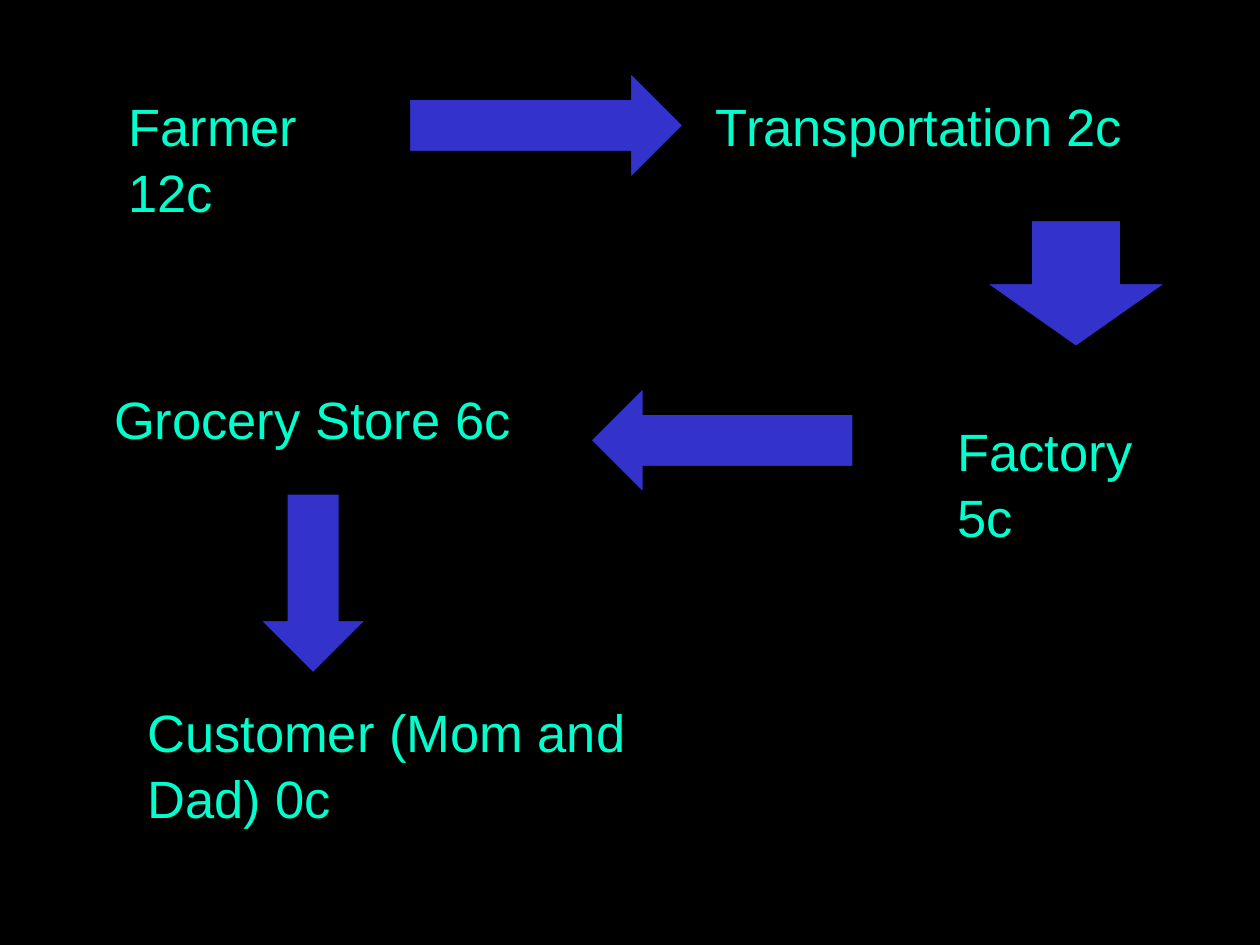
from pptx import Presentation
from pptx.dml.color import RGBColor
from pptx.enum.shapes import MSO_SHAPE
from pptx.enum.text import PP_ALIGN
from pptx.util import Inches, Pt

COLORS = {"background": "000000", "text": "00FFCC", "arrow": "3333CC", "outline": "000000"}
FONT = "Arial"

# text, alignment, (left, top, width, height)
STAGES = [
    ("Farmer 12c", PP_ALIGN.LEFT, (0.92, 0.67, 2.12, 0.5)),
    ("Transportation 2c", PP_ALIGN.CENTER, (5.42, 0.67, 3.75, 0.9)),
    ("Factory 5c", PP_ALIGN.LEFT, (7.5, 3.25, 1.98, 0.5)),
    ("Grocery Store 6c", PP_ALIGN.CENTER, (0.27, 3, 4.42, 0.5)),
    ("Customer (Mom and Dad) 0c", PP_ALIGN.LEFT, (1.07, 5.48, 4.53, 0.8)),
]
# preset, (left, top, width, height)
ARROWS = [
    (MSO_SHAPE.RIGHT_ARROW, (3.25, 0.58, 2.17, 0.83)),
    (MSO_SHAPE.DOWN_ARROW, (7.83, 1.75, 1.42, 1)),
    (MSO_SHAPE.LEFT_ARROW, (4.69, 3.08, 2.08, 0.83)),
    (MSO_SHAPE.DOWN_ARROW, (2.07, 3.92, 0.83, 1.42)),
]


def color(name):
    return RGBColor.from_string(COLORS[name])


def add_stage(slide, text, alignment, box):
    text_frame = slide.shapes.add_textbox(*map(Inches, box)).text_frame
    text_frame.word_wrap = True
    paragraph = text_frame.paragraphs[0]
    paragraph.alignment = alignment
    paragraph.line_spacing = 1.05
    run = paragraph.add_run()
    run.text = text
    run.font.name = FONT
    run.font.size = Pt(30)
    run.font.color.rgb = color("text")


def add_arrow(slide, preset, box):
    shape = slide.shapes.add_shape(preset, *map(Inches, box))
    shape.shadow.inherit = False
    shape.fill.solid()
    shape.fill.fore_color.rgb = color("arrow")
    shape.line.color.rgb = color("outline")
    shape.line.width = Pt(0.75)


def main():
    presentation = Presentation()
    presentation.slide_width = Inches(10)
    presentation.slide_height = Inches(7.5)
    slide = presentation.slides.add_slide(presentation.slide_layouts[6])
    slide.background.fill.solid()
    slide.background.fill.fore_color.rgb = color("background")
    for stage in STAGES:
        add_stage(slide, *stage)
    for arrow in ARROWS:
        add_arrow(slide, *arrow)
    presentation.save("out.pptx")


if __name__ == "__main__":
    main()
